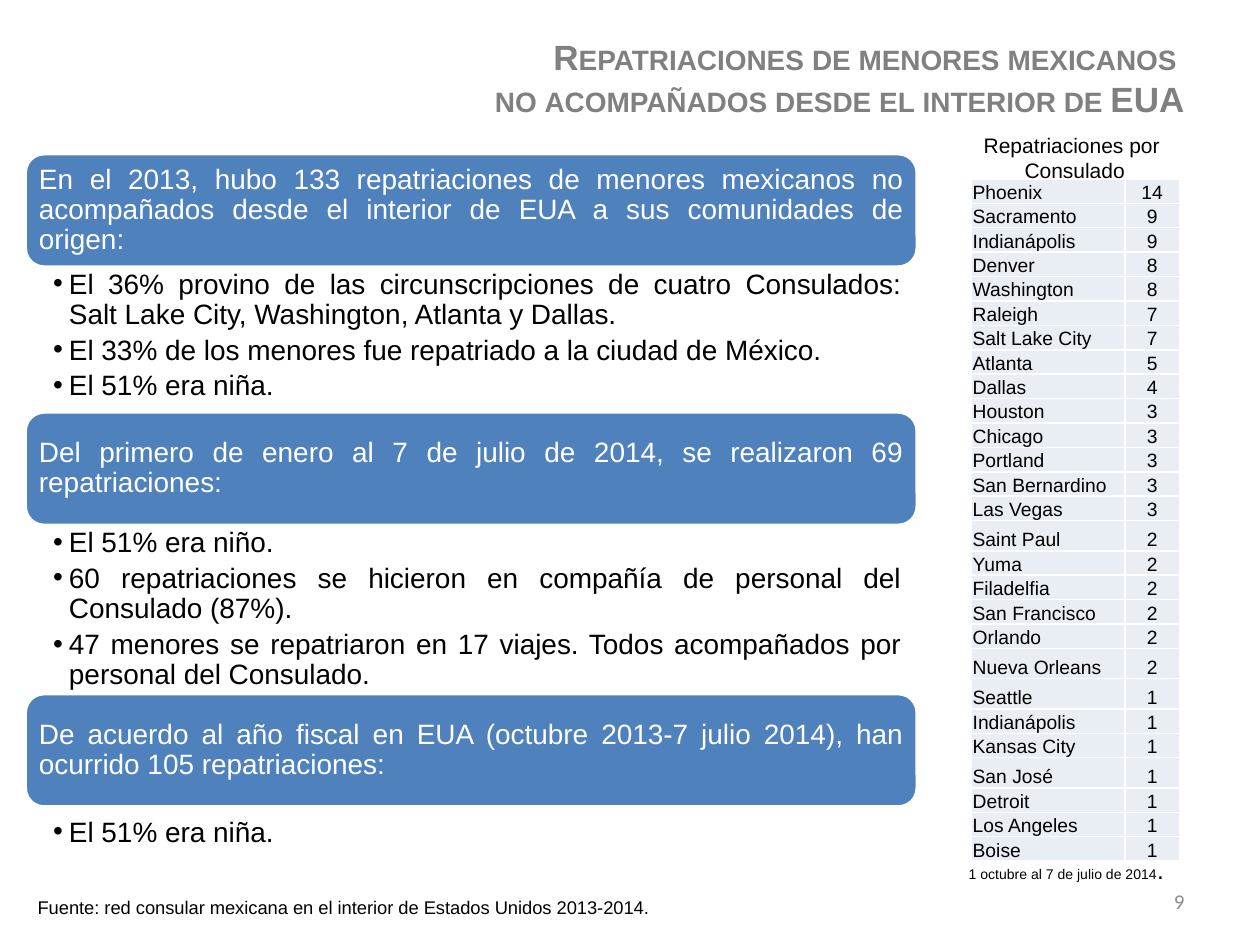
"""Build the slide on repatriations of unaccompanied Mexican minors from the US interior."""
from dataclasses import dataclass

from lxml import etree
from pptx import Presentation
from pptx import util as u
from pptx.dml.color import RGBColor
from pptx.enum import shapes, text
from pptx.oxml import ns

BLUE = RGBColor(0x4F, 0x81, 0xBD)
PALE = RGBColor(0xE9, 0xED, 0xF4)
WHITE = RGBColor(0xFF, 0xFF, 0xFF)
BLACK = RGBColor(0, 0, 0)
TITLE_GRAY = RGBColor(0x80, 0x80, 0x80)
NUMBER_GRAY = RGBColor(0x8C, 0x8C, 0x8C)

LEFT = text.PP_ALIGN.LEFT
RIGHT = text.PP_ALIGN.RIGHT
CENTER = text.PP_ALIGN.CENTER
JUSTIFY = text.PP_ALIGN.JUSTIFY

COLUMN_LEFT, COLUMN_WIDTH, BANNER_HEIGHT = 14.4, 509.76, 64.8
ROW_HEIGHT, TALL_ROW_HEIGHT = 13.97, 17.28


@dataclass(frozen=True)
class Section:
    """A banner and the bulleted list under it."""
    banner: str
    banner_top: float
    bullets: tuple[str, ...]
    list_top: float
    list_height: float
    placeholder: int
    align: text.PP_ALIGN = JUSTIFY


@dataclass(frozen=True)
class Consulate:
    """A table row with its consulate and count."""
    name: str
    count: int
    tall: bool = False


SECTIONS = (
    Section(
        "En el 2013, hubo 133 repatriaciones de menores mexicanos no acompañados "
        "desde el interior de EUA a sus comunidades de origen:", 87.84,
        ("El 36% provino de las circunscripciones de cuatro Consulados: "
         "Salt Lake City, Washington, Atlanta y Dallas. ",
         "El 33% de los menores fue repatriado a la ciudad de México.",
         "El 51% era niña."), 152.64, 82.8, 2),
    Section(
        "Del primero de enero al 7 de julio de 2014, se realizaron 69 repatriaciones:", 235.44,
        ("El 51% era niño.",
         "60 repatriaciones se hicieron en compañía de personal del Consulado (87%).",
         "47 menores se repatriaron en 17 viajes. Todos acompañados por personal del Consulado."),
        300.24, 82.8, 4),
    Section(
        "De acuerdo al año fiscal en EUA (octubre 2013-7 julio 2014), han ocurrido "
        "105 repatriaciones:", 396.36,
        ("El 51% era niña.",), 465.84, 26.64, 1, LEFT),
)

CONSULATES = (
    Consulate("Phoenix", 14), Consulate("Sacramento", 9), Consulate("Indianápolis", 9),
    Consulate("Denver", 8), Consulate("Washington", 8), Consulate("Raleigh", 7),
    Consulate("Salt Lake City", 7), Consulate("Atlanta", 5), Consulate("Dallas", 4),
    Consulate("Houston", 3), Consulate("Chicago", 3), Consulate("Portland", 3),
    Consulate("San Bernardino", 3), Consulate("Las Vegas", 3), Consulate("Saint Paul", 2, True),
    Consulate("Yuma", 2), Consulate("Filadelfia", 2), Consulate("San Francisco", 2),
    Consulate("Orlando", 2), Consulate("Nueva Orleans", 2, True), Consulate("Seattle", 1, True),
    Consulate("Indianápolis", 1), Consulate("Kansas City", 1), Consulate("San José", 1, True),
    Consulate("Detroit", 1), Consulate("Los Angeles", 1), Consulate("Boise", 1),
)


def write(paragraph, content: str, *, size: float, color: RGBColor = BLACK,
          align: text.PP_ALIGN = LEFT, font: str = "Arial", bold: bool = False,
          small_caps: bool = False, spacing: float = 1.0, after: float = 0) -> None:
    """Append a formatted run to a paragraph."""
    paragraph.alignment = align
    paragraph.line_spacing = spacing
    paragraph.space_before = u.Pt(0)
    paragraph.space_after = u.Pt(after)
    run = paragraph.add_run()
    run.text = content
    run.font.name, run.font.size, run.font.bold = font, u.Pt(size), bold
    run.font.color.rgb = color
    if small_caps:
        run.font._element.set("cap", "small")


def next_paragraph(frame, index: int):
    """Return the first paragraph of a frame or a new one."""
    return frame.add_paragraph() if index else frame.paragraphs[0]


def place(shape, left: float, top: float, width: float, height: float) -> None:
    """Move and size a shape in points."""
    shape.left, shape.top = u.Pt(left), u.Pt(top)
    shape.width, shape.height = u.Pt(width), u.Pt(height)


def set_margins(target, left: float, top: float, right: float, bottom: float) -> None:
    """Set the inner margins of a frame or cell in points."""
    target.margin_left, target.margin_top = u.Pt(left), u.Pt(top)
    target.margin_right, target.margin_bottom = u.Pt(right), u.Pt(bottom)


def add_label(slide, box: tuple[float, ...], wrap: bool = False):
    """Add a text box and return its frame."""
    frame = slide.shapes.add_textbox(*map(u.Pt, box)).text_frame
    frame.word_wrap = wrap
    return frame


def draw_title(slide) -> None:
    """Fill the title placeholder."""
    title = slide.shapes.title
    place(title, 221.76, 16.56, 462.24, 55.44)
    frame = title.text_frame
    frame.auto_size = text.MSO_AUTO_SIZE.NONE
    frame.vertical_anchor = text.MSO_ANCHOR.TOP
    lines = ("Repatriaciones de menores mexicanos ", "no acompañados desde el interior de EUA")
    for index, line in enumerate(lines):
        write(next_paragraph(frame, index), line, size=20, color=TITLE_GRAY,
              align=RIGHT, bold=True, small_caps=True)


def draw_section(slide, section: Section) -> None:
    """Draw a banner and fill its list placeholder."""
    banner = slide.shapes.add_shape(
        shapes.MSO_SHAPE.ROUNDED_RECTANGLE,
        *map(u.Pt, (COLUMN_LEFT, section.banner_top, COLUMN_WIDTH, BANNER_HEIGHT)))
    banner.shadow.inherit = False
    banner.fill.solid()
    banner.fill.fore_color.rgb = BLUE
    banner.line.color.rgb = WHITE
    banner.line.width = u.Pt(2)
    frame = banner.text_frame
    frame.word_wrap = True
    frame.vertical_anchor = text.MSO_ANCHOR.MIDDLE
    set_margins(frame, 4.7, 4.7, 4.7, 4.7)
    write(frame.paragraphs[0], section.banner, size=16, color=WHITE,
          align=JUSTIFY, spacing=0.9, after=5.6)

    body = slide.placeholders[section.placeholder]
    place(body, COLUMN_LEFT, section.list_top, COLUMN_WIDTH, section.list_height)
    frame = body.text_frame
    frame.auto_size = text.MSO_AUTO_SIZE.NONE
    frame.vertical_anchor = text.MSO_ANCHOR.TOP
    set_margins(frame, 16, 1.6, 9.1, 1.6)
    for index, bullet in enumerate(section.bullets):
        paragraph = next_paragraph(frame, index)
        paragraph.level = 1
        properties = paragraph._p.get_or_add_pPr()
        properties.set("marL", str(u.Pt(9)))
        properties.set("indent", str(u.Pt(-9)))
        etree.SubElement(properties, ns.qn("a:buFont"), typeface="Arial")
        etree.SubElement(properties, ns.qn("a:buChar"), char="•")
        write(paragraph, bullet, size=16, align=section.align, spacing=0.9, after=3.2)


def draw_cell(cell, content: str, align: text.PP_ALIGN) -> None:
    """Fill a table cell and give it white borders."""
    cell.vertical_anchor = text.MSO_ANCHOR.BOTTOM
    set_margins(cell, 0.72, 0.72, 0.72, 0)
    cell.fill.solid()
    cell.fill.fore_color.rgb = PALE
    write(cell.text_frame.paragraphs[0], content, size=11, align=align)
    properties = cell._tc.get_or_add_tcPr()
    for index, side in enumerate(("lnL", "lnR", "lnT", "lnB")):
        border = etree.Element(ns.qn(f"a:{side}"), w=str(u.Pt(1)))
        fill = etree.SubElement(border, ns.qn("a:solidFill"))
        etree.SubElement(fill, ns.qn("a:srgbClr"), val=str(WHITE))
        properties.insert(index, border)


def draw_table(slide) -> None:
    """Draw the table of repatriations by consulate."""
    heights = [TALL_ROW_HEIGHT if row.tall else ROW_HEIGHT for row in CONSULATES]
    table = slide.shapes.add_table(
        len(CONSULATES), 2, *map(u.Pt, (555.12, 102.24, 118.8, sum(heights)))).table
    table.first_row = table.horz_banding = False
    table.columns[0].width, table.columns[1].width = u.Pt(87.84), u.Pt(30.96)
    for index, (row, height) in enumerate(zip(CONSULATES, heights)):
        table.rows[index].height = u.Pt(height)
        draw_cell(table.cell(index, 0), row.name, LEFT)
        draw_cell(table.cell(index, 1), str(row.count), CENTER)


def draw_labels(slide) -> None:
    """Draw the table caption, notes and slide number."""
    caption = add_label(slide, (554.4, 72, 119.52, 36))
    for index, line in enumerate(("Repatriaciones por ", "Consulado")):
        write(next_paragraph(caption, index), line, size=12, align=CENTER)
    period = add_label(slide, (546.48, 485.28, 127.44, 24.48)).paragraphs[0]
    write(period, "1 octubre al 7 de julio de 2014", size=8)
    write(period, ".", size=14)
    source = add_label(slide, (14.4, 508.32, 370.8, 20.16))
    write(source.paragraphs[0],
          "Fuente: red consular mexicana en el interior de Estados Unidos 2013-2014.", size=10.5)
    number = add_label(slide, (516.24, 500.4, 167.76, 28.8), wrap=True)
    number.vertical_anchor = text.MSO_ANCHOR.MIDDLE
    write(number.paragraphs[0], "9", size=12, color=NUMBER_GRAY, align=RIGHT, font="Calibri")


def main() -> None:
    """Build and save the presentation."""
    presentation = Presentation()
    presentation.slide_width, presentation.slide_height = u.Pt(720), u.Pt(540)
    slide = presentation.slides.add_slide(presentation.slide_layouts[4])
    draw_title(slide)
    for section in SECTIONS:
        draw_section(slide, section)
    unused = slide.placeholders[3]._element
    unused.getparent().remove(unused)
    draw_table(slide)
    draw_labels(slide)
    presentation.save("out.pptx")


if __name__ == "__main__":
    main()
